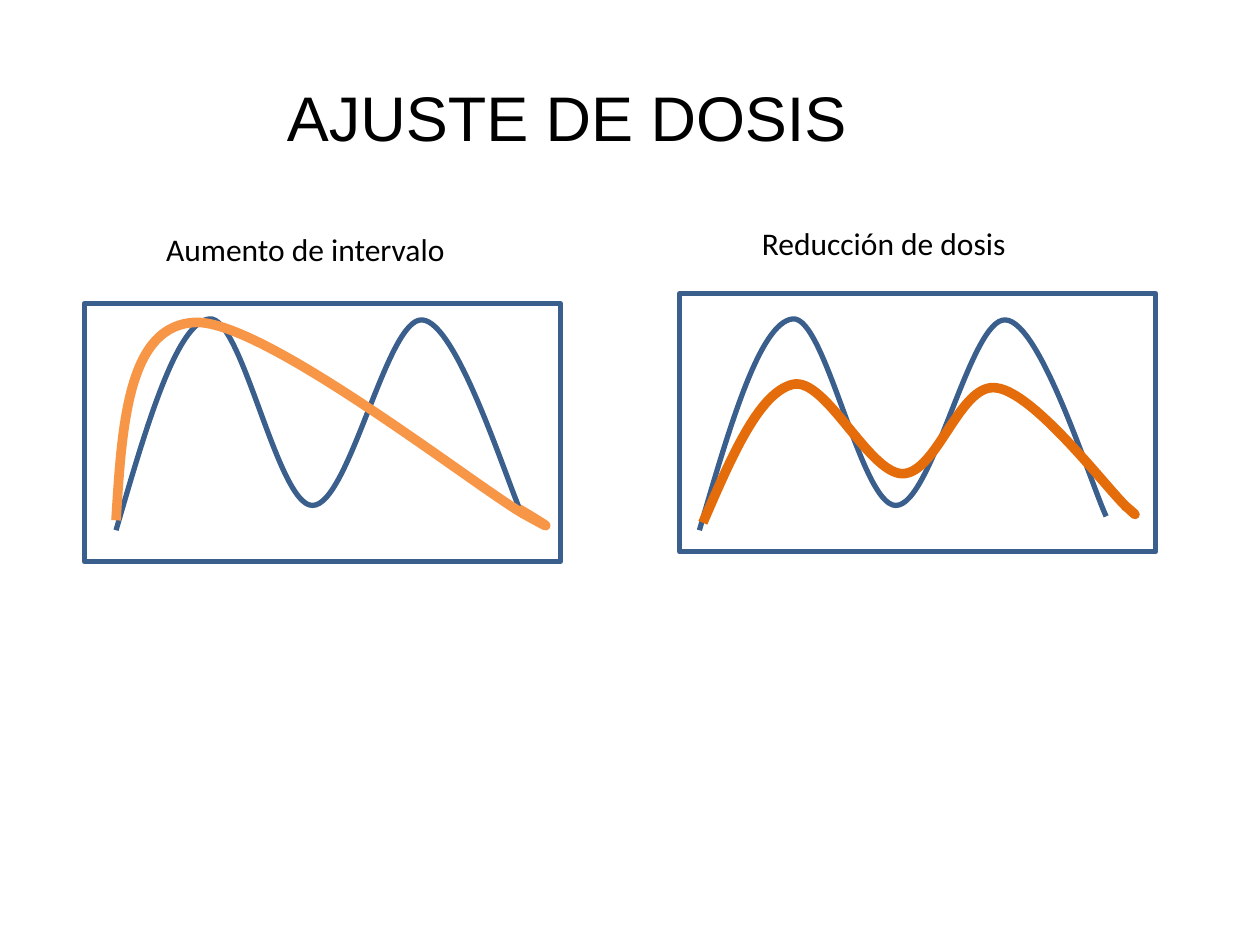
from dataclasses import dataclass

from lxml import etree
from pptx import Presentation
from pptx.dml.color import RGBColor
from pptx.enum.shapes import MSO_SHAPE
from pptx.enum.text import MSO_ANCHOR, PP_ALIGN
from pptx.oxml.ns import qn
from pptx.util import Cm, Pt

RECTANGLE = MSO_SHAPE.RECTANGLE
MIDDLE, TOP = MSO_ANCHOR.MIDDLE, MSO_ANCHOR.TOP
CENTER, LEFT = PP_ALIGN.CENTER, PP_ALIGN.LEFT

Point = tuple[float, float]


@dataclass(frozen=True)
class Theme:
    text: RGBColor = RGBColor(0x00, 0x00, 0x00)
    usual: RGBColor = RGBColor(0x3A, 0x5F, 0x8C)
    longer_interval: RGBColor = RGBColor(0xF7, 0x96, 0x46)
    lower_dose: RGBColor = RGBColor(0xE4, 0x6C, 0x0A)
    title_font: str = "Arial"
    label_font: str = "Calibri"
    title_size: float = 36
    label_size: float = 18
    thin: float = 3
    thick: float = 5.5


@dataclass(frozen=True)
class Box:
    """A rectangle on the slide, in centimetres."""
    left: float
    top: float
    width: float
    height: float

    def lengths(self) -> tuple[Cm, Cm, Cm, Cm]:
        return Cm(self.left), Cm(self.top), Cm(self.width), Cm(self.height)


@dataclass(frozen=True)
class Curve:
    """A start point and three Bézier points per segment, with the box they fill."""
    box: Box
    points: list[Point]


@dataclass(frozen=True)
class Panel:
    label: str
    label_box: Box
    frame: Box
    usual_shift: float
    adjusted: Curve
    adjusted_color: RGBColor


THEME = Theme()

USUAL_DOSE = Curve(Box(2.34, 6.43, 8.2, 4.26), [
    (2.34, 10.69),
    (2.95, 8.59), (3.56, 6.5), (4.22, 6.43),
    (4.88, 6.35), (5.59, 10.19), (6.3, 10.19),
    (7.04, 10.19), (7.8, 6.4), (8.51, 6.45),
    (9.22, 6.48), (10.24, 9.78), (10.54, 10.41),
])
LONGER_INTERVAL = Curve(Box(2.34, 6.5, 8.66, 4.09), [
    (2.34, 10.49),
    (2.46, 8.51), (2.59, 6.53), (3.96, 6.5),
    (5.33, 6.48), (9.45, 9.7), (10.52, 10.34),
    (11.61, 10.95), (10.52, 10.29), (10.46, 10.26),
])
LOWER_DOSE = Curve(Box(14.17, 7.75, 8.71, 2.79), [
    (14.17, 10.54),
    (14.73, 9.25), (15.29, 7.92), (15.98, 7.75),
    (16.64, 7.59), (17.5, 9.53), (18.19, 9.55),
    (18.9, 9.55), (19.35, 7.7), (20.09, 7.82),
    (20.85, 7.92), (22.28, 9.8), (22.68, 10.19),
    (23.11, 10.59), (22.73, 10.21), (22.66, 10.19),
])

PANELS = [
    Panel("Aumento de intervalo", Box(3.1, 4.51, 6.2, 1.02), Box(1.7, 6.12, 9.6, 5.2),
          0, LONGER_INTERVAL, THEME.longer_interval),
    Panel("Reducción de dosis", Box(15.11, 4.39, 5.49, 1.02), Box(13.7, 5.92, 9.6, 5.2),
          11.76, LOWER_DOSE, THEME.lower_dose),
]


def style_outline(shape, color: RGBColor, width: float) -> None:
    """Leave the shape unfilled, with a plain line."""
    shape.shadow.inherit = False
    shape.fill.background()
    shape.line.color.rgb = color
    shape.line.width = Pt(width)
    etree.SubElement(shape.line._get_or_add_ln(), qn("a:round"))


def add_curve(slide, curve: Curve, color: RGBColor, width: float, shift: float = 0) -> None:
    """Size a freeform by its box, then give its outline the Bézier segments."""
    left, top, box_width, box_height = curve.box.lengths()
    builder = slide.shapes.build_freeform(left, top)
    builder.add_line_segments([(left + box_width, top + box_height)], close=False)
    shape = builder.convert_to_shape(Cm(shift), 0)
    outline = next(shape._element.iter(qn("a:path")))
    for command in list(outline):
        outline.remove(command)

    def add_command(name: str, points: list[Point]) -> None:
        command = etree.SubElement(outline, qn(name))
        for x, y in points:
            etree.SubElement(command, qn("a:pt"), x=str(Cm(x) - left), y=str(Cm(y) - top))

    add_command("a:moveTo", curve.points[:1])
    for start in range(1, len(curve.points), 3):
        add_command("a:cubicBezTo", curve.points[start:start + 3])
    style_outline(shape, color, width)


def add_text(slide, box: Box, text: str, font: str, size: float,
             align: PP_ALIGN = LEFT, anchor: MSO_ANCHOR = TOP, wrap: bool = False) -> None:
    frame = slide.shapes.add_textbox(*box.lengths()).text_frame
    frame.word_wrap = wrap
    frame.vertical_anchor = anchor
    para = frame.paragraphs[0]
    para.alignment = align
    span = para.add_run()
    span.text = text
    span.font.name = font
    span.font.size = Pt(size)
    span.font.color.rgb = THEME.text


def add_panel_frame(slide, panel: Panel) -> None:
    frame = slide.shapes.add_shape(RECTANGLE, *panel.frame.lengths())
    style_outline(frame, THEME.usual, THEME.thin)


def add_usual_curve(slide, panel: Panel) -> None:
    add_curve(slide, USUAL_DOSE, THEME.usual, THEME.thin, panel.usual_shift)


def add_adjusted_curve(slide, panel: Panel) -> None:
    add_curve(slide, panel.adjusted, panel.adjusted_color, THEME.thick)


def add_label(slide, panel: Panel) -> None:
    add_text(slide, panel.label_box, panel.label, THEME.label_font, THEME.label_size)


def main() -> None:
    deck = Presentation()
    deck.slide_width, deck.slide_height = Cm(25.4), Cm(19.05)
    page = deck.slides.add_slide(deck.slide_layouts[6])
    add_text(page, Box(0, 0.76, 22.86, 3.18), "AJUSTE DE DOSIS", THEME.title_font,
             THEME.title_size, CENTER, MIDDLE, wrap=True)
    for add_layer in (add_panel_frame, add_usual_curve, add_adjusted_curve, add_label):
        for panel in PANELS:
            add_layer(page, panel)
    deck.save("out.pptx")


if __name__ == "__main__":
    main()
